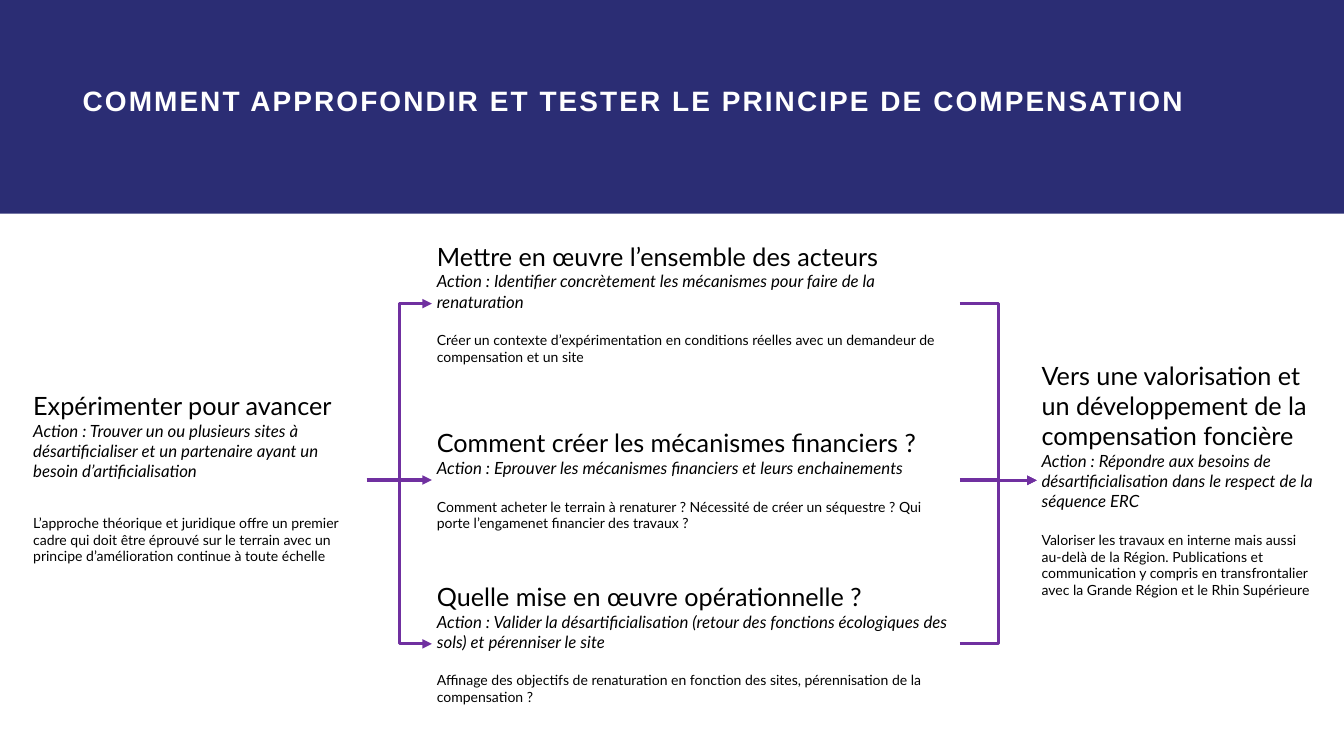
"""Build the slide on testing the land compensation principle."""
from lxml.etree import SubElement
from pptx import Presentation
from pptx.dml.color import RGBColor
from pptx.enum.shapes import MSO_CONNECTOR, MSO_SHAPE
from pptx.enum.text import MSO_ANCHOR, MSO_AUTO_SIZE, PP_ALIGN
from pptx.oxml.ns import qn
from pptx.util import Inches, Pt

COLORS = {"band": "2B2D74", "title": "FFFFFF", "text": "000000", "arrow": "7030A0"}
LEFT_SITE, RIGHT_SITE = 1, 3


def add_run(paragraph, text, font_name, size, color, bold=False, italic=False):
    run = paragraph.add_run()
    run.text = text
    run.font.name = font_name
    run.font.size = Pt(size)
    run.font.bold = bold
    run.font.italic = italic
    run.font.color.rgb = RGBColor.from_string(COLORS[color])
    return run


def add_arrow(source, target):
    arrow = slide.shapes.add_connector(
        MSO_CONNECTOR.ELBOW,
        source.left + source.width, source.top + source.height // 2,
        target.left, target.top + target.height // 2,
    )
    arrow.begin_connect(source, RIGHT_SITE)
    arrow.end_connect(target, LEFT_SITE)
    arrow.line.color.rgb = RGBColor.from_string(COLORS["arrow"])
    arrow.line.width = Pt(4.5)
    SubElement(arrow.line._get_or_add_ln(), qn("a:tailEnd"), type="triangle")
    SubElement(arrow._element.spPr, qn("a:effectLst"))


prs = Presentation()
prs.slide_width, prs.slide_height = Inches(26.67), Inches(15)
slide = prs.slides.add_slide(prs.slide_layouts[5])

band = slide.shapes.add_shape(MSO_SHAPE.RECTANGLE, 0, 0, prs.slide_width, Inches(4.24))
band.shadow.inherit = False
band.fill.solid()
band.fill.fore_color.rgb = RGBColor.from_string(COLORS["band"])
band.line.fill.background()
slide.shapes._spTree.insert(2, band._element)

title = slide.shapes.title
title.left, title.top = Inches(1.54), Inches(1.61)
title.width, title.height = Inches(23.6), Inches(2.23)
title.text_frame.word_wrap = True
title.text_frame.auto_size = MSO_AUTO_SIZE.NONE
title.text_frame.vertical_anchor = MSO_ANCHOR.TOP
heading = title.text_frame.paragraphs[0]
heading.alignment = PP_ALIGN.LEFT
heading_run = add_run(
    heading, "COMMENT APPROFONDIR ET TESTER LE PRINCIPE DE COMPENSATION",
    "Arial", 40, "title", bold=True,
)
heading_run.font._element.set("spc", "300")

STEPS = [
    ((0.56, 7.69, 6.72, 3.67), 48, "Expérimenter pour avancer",
     "Action : Trouver un ou plusieurs sites à désartificialiser et un partenaire "
     "ayant un besoin d’artificialisation",
     "L’approche théorique et juridique offre un premier cadre qui doit être éprouvé "
     "sur le terrain avec un principe d’amélioration continue à toute échelle"),
    ((8.57, 4.73, 10.48, 2.59), 29, "Mettre en œuvre l’ensemble des acteurs",
     "Action : Identifier concrètement les mécanismes pour faire de la renaturation",
     "Créer un contexte d’expérimentation en conditions réelles avec un demandeur de "
     "compensation et un site"),
    ((8.57, 8.43, 10.48, 2.19), 29, "Comment créer les mécanismes financiers ?",
     "Action : Eprouver les mécanismes financiers et leurs enchainements",
     "Comment acheter le terrain à renaturer ? Nécessité de créer un séquestre ? Qui "
     "porte l’engamenet financier des travaux ?"),
    ((8.57, 11.48, 10.48, 2.59), 29, "Quelle mise en œuvre opérationnelle ?",
     "Action : Valider la désartificialisation (retour des fonctions écologiques des "
     "sols) et pérenniser le site",
     "Affinage des objectifs de renaturation en fonction des sites, pérennisation de "
     "la compensation ?"),
    ((20.57, 7.09, 5.72, 4.88), 29,
     "Vers une valorisation et un développement de la compensation foncière",
     "Action : Répondre aux besoins de désartificialisation dans le respect de la "
     "séquence ERC",
     "Valoriser les travaux en interne mais aussi au-delà de la Région. Publications "
     "et communication y compris en transfrontalier avec la Grande Région et le Rhin "
     "Supérieure"),
]

steps = []
for position, gap, name, action, detail in STEPS:
    step = slide.shapes.add_textbox(*map(Inches, position))
    frame = step.text_frame
    frame.word_wrap = True
    frame.auto_size = MSO_AUTO_SIZE.SHAPE_TO_FIT_TEXT
    add_run(frame.paragraphs[0], name, "Lato", 36, "text")
    add_run(frame.add_paragraph(), action, "Lato", 24, "text", italic=True)
    explanation = frame.add_paragraph()
    explanation.space_before = Pt(gap)
    add_run(explanation, detail, "Lato", 20, "text")
    steps.append(step)

start, *levers, outcome = steps
for lever in levers:
    add_arrow(start, lever)
    add_arrow(lever, outcome)

prs.save("out.pptx")
